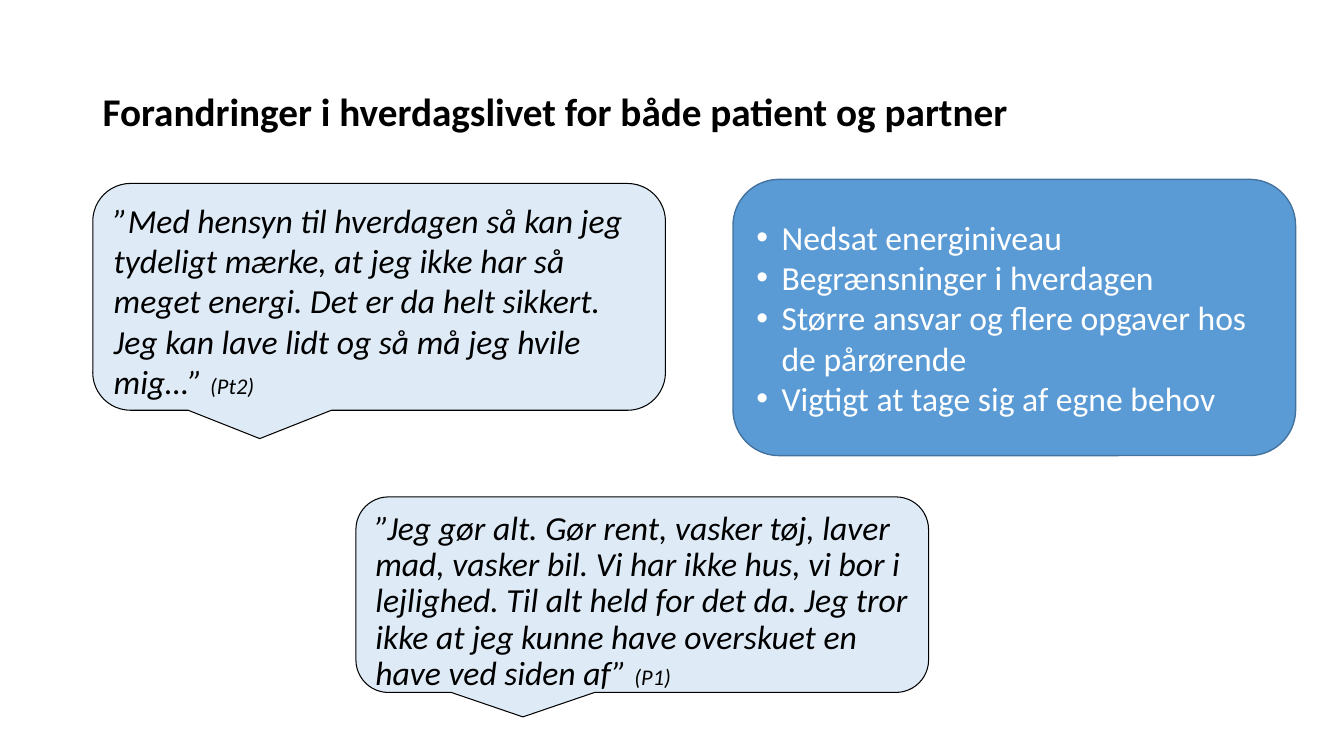
from dataclasses import dataclass
from typing import Optional

from lxml.etree import SubElement
from pptx import Presentation
from pptx.dml.color import RGBColor
from pptx.enum.shapes import MSO_SHAPE as SHAPE
from pptx.enum.text import MSO_ANCHOR as ANCHOR, PP_ALIGN as ALIGN
from pptx.oxml.ns import qn
from pptx.util import Inches, Pt

COLORS = {
    "black": "000000",
    "white": "FFFFFF",
    "pale": "DEEBF7",
    "blue": "5B9BD5",
    "edge": "43739E",
}
FONT = "Calibri"


@dataclass(frozen=True)
class Quote:
    left: float
    top: float
    height: float
    text: str
    source: str
    line_spacing: float = 1.0
    space_before: float = 0


QUOTES = [
    Quote(0.92, 1.82, 2.25,
          "”Med hensyn til hverdagen så kan jeg tydeligt mærke, at jeg ikke har så "
          "meget energi. Det er da helt sikkert. Jeg kan lave lidt og så må jeg hvile mig…” ",
          "(Pt2)"),
    Quote(3.53, 4.93, 1.94,
          "”Jeg gør alt. Gør rent, vasker tøj, laver mad, vasker bil. Vi har ikke hus, "
          "vi bor i lejlighed. Til alt held for det da. Jeg tror ikke at jeg kunne have "
          "overskuet en have ved siden af” ",
          "(P1)", line_spacing=0.9, space_before=10),
]
QUOTE_WIDTH = 5.68
FINDINGS = [
    "Nedsat energiniveau",
    "Begrænsninger i hverdagen",
    "Større ansvar og flere opgaver hos de pårørende",
    "Vigtigt at tage sig af egne behov",
]


def rgb(name: str) -> RGBColor:
    return RGBColor.from_string(COLORS[name])


def add_run(p, text: str, *, size: float = 24, color: str = "black",
            bold: bool = False, italic: bool = False) -> None:
    r = p.add_run()
    r.text = text
    r.font.name = FONT
    r.font.size = Pt(size)
    r.font.bold = bold
    r.font.italic = italic
    r.font.color.rgb = rgb(color)


def add_bullet(p, indent: float = 0.25) -> None:
    pPr = p._p.get_or_add_pPr()
    pPr.set("marL", str(Inches(indent)))
    pPr.set("indent", str(-Inches(indent)))
    SubElement(pPr, qn("a:buFont")).set("typeface", "Arial")
    SubElement(pPr, qn("a:buChar")).set("char", "•")


def add_box(slide, kind, left: float, top: float, width: float, height: float, *,
            fill: str, line: str, line_width: float, anchor: Optional[ANCHOR] = None):
    sp = slide.shapes.add_shape(kind, Inches(left), Inches(top), Inches(width), Inches(height))
    sp.shadow.inherit = False
    sp.fill.solid()
    sp.fill.fore_color.rgb = rgb(fill)
    sp.line.color.rgb = rgb(line)
    sp.line.width = Pt(line_width)
    tf = sp.text_frame
    tf.word_wrap = True
    tf.vertical_anchor = anchor or ANCHOR.TOP
    return tf


def add_title(slide, text: str) -> None:
    tf = slide.shapes.add_textbox(Inches(0.92), Inches(0.4), Inches(11.5), Inches(1.45)).text_frame
    tf.word_wrap = True
    tf.vertical_anchor = ANCHOR.MIDDLE
    p = tf.paragraphs[0]
    p.line_spacing = 0.9
    add_run(p, text, size=28, bold=True)


def add_quote(slide, quote: Quote) -> None:
    tf = add_box(slide, SHAPE.ROUNDED_RECTANGULAR_CALLOUT, quote.left, quote.top,
                 QUOTE_WIDTH, quote.height, fill="pale", line="black", line_width=0.75)
    p = tf.paragraphs[0]
    p.alignment = ALIGN.LEFT
    p.line_spacing = quote.line_spacing
    p.space_before = Pt(quote.space_before)
    add_run(p, quote.text, italic=True)
    add_run(p, quote.source, size=16, italic=True)


def add_findings(slide, findings: list[str]) -> None:
    tf = add_box(slide, SHAPE.ROUNDED_RECTANGLE, 7.27, 1.78, 5.58, 2.74,
                 fill="blue", line="edge", line_width=1, anchor=ANCHOR.MIDDLE)
    for i, text in enumerate(findings):
        p = tf.add_paragraph() if i else tf.paragraphs[0]
        p.alignment = ALIGN.LEFT
        add_bullet(p)
        add_run(p, text, color="white")


def main() -> None:
    prs = Presentation()
    prs.slide_width, prs.slide_height = Inches(13.33), Inches(7.5)
    slide = prs.slides.add_slide(prs.slide_layouts[6])
    add_title(slide, "Forandringer i hverdagslivet for både patient og partner")
    for quote in QUOTES:
        add_quote(slide, quote)
    add_findings(slide, FINDINGS)
    prs.save("out.pptx")


if __name__ == "__main__":
    main()
